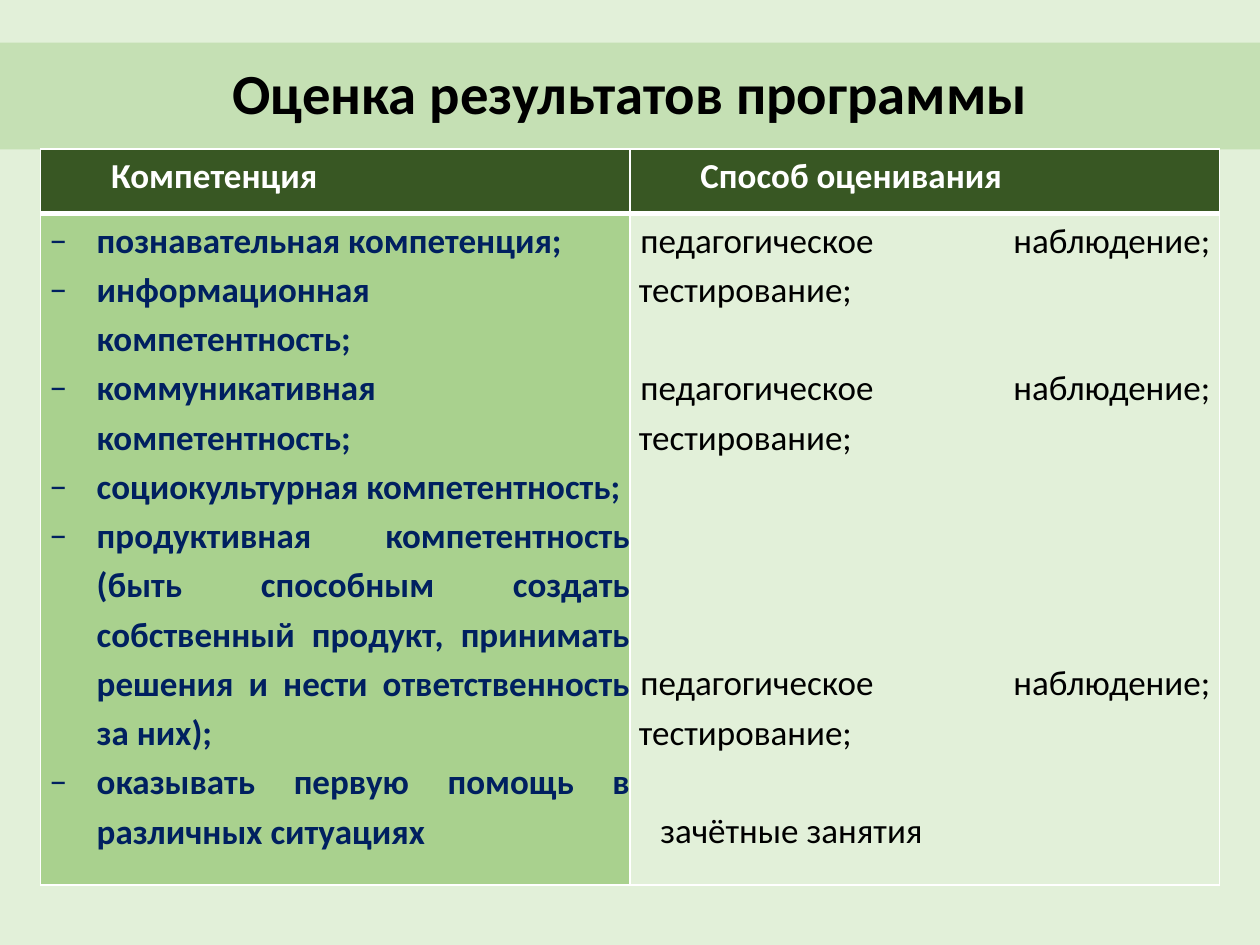
import pptx
import pptx.util
import pptx.dml.color
import pptx.enum.text
from dataclasses import dataclass
from lxml import etree
from pptx.oxml.ns import qn
from pptx.util import Cm, Pt

ALIGN = pptx.enum.text.PP_ALIGN


@dataclass(frozen=True)
class Theme:
    font: str = "Calibri"
    pale: str = "E2F0D9"
    band: str = "C5E0B4"
    leaf: str = "A9D18E"
    forest: str = "385723"
    navy: str = "002060"
    black: str = "000000"
    white: str = "FFFFFF"
    title_size: float = 32.4
    body_size: float = 20
    spacing: float = 1.15
    line_pitch: float = 28.1


T = Theme()

HEADERS = ["Компетенция", "Способ оценивания"]
COMPETENCES = [
    "познавательная компетенция;",
    "информационная компетентность;",
    "коммуникативная компетентность;",
    "социокультурная компетентность;",
    "продуктивная компетентность (быть способным создать собственный продукт, "
    "принимать решения и нести ответственность за них);",
    "оказывать первую помощь в различных ситуациях",
]
OBSERVATION = "педагогическое наблюдение; тестирование;"
# Assessment method, free lines above it, first-line indent in cm
METHODS = [
    (OBSERVATION, 0, 0.03),
    (OBSERVATION, 1, 0.03),
    (OBSERVATION, 4, 0.03),
    ("зачётные занятия", 1, 0.43),
]


def rgb(value):
    return pptx.dml.color.RGBColor.from_string(value)


def paint(fill, color):
    fill.solid()
    fill.fore_color.rgb = rgb(color)


def write(tf, text, first=False, size=T.body_size, color=T.black, bold=False,
          align=ALIGN.JUSTIFY, spacing=T.spacing, before=0, margin=0, indent=0,
          bullet=None):
    """Add one formatted paragraph; first=True uses the one already there."""
    p = tf.paragraphs[0] if first else tf.add_paragraph()
    p.alignment, p.line_spacing = align, spacing
    p.space_before, p.space_after = Pt(before), Pt(0)
    pPr = p._p.get_or_add_pPr()
    pPr.set("marL", str(Cm(margin)))
    pPr.set("indent", str(Cm(indent)))
    if bullet:
        etree.SubElement(pPr, qn("a:buFont")).set("typeface", T.font)
        etree.SubElement(pPr, qn("a:buChar")).set("char", bullet)
    r = p.add_run()
    r.text = text
    r.font.name, r.font.size, r.font.bold = T.font, Pt(size), bold
    r.font.color.rgb = rgb(color)


def add_title(s, text):
    sp = s.shapes.title
    sp.left, sp.top, sp.width, sp.height = Cm(0), Cm(0.86), Cm(25.4), Cm(2.15)
    paint(sp.fill, T.band)
    tf = sp.text_frame
    tf.auto_size = pptx.enum.text.MSO_AUTO_SIZE.NONE
    tf.vertical_anchor = pptx.enum.text.MSO_ANCHOR.MIDDLE
    write(tf, text, first=True, size=T.title_size, bold=True,
          align=ALIGN.CENTER, spacing=0.9)


def set_borders(cell, **widths):
    """Draw white cell borders; widths are points by side L, R, T, B."""
    tcPr = cell._tc.get_or_add_tcPr()
    for i, side in enumerate("LRTB"):
        ln = etree.Element(qn("a:ln" + side), w=str(Pt(widths.get(side, 1))))
        fill = etree.SubElement(ln, qn("a:solidFill"))
        etree.SubElement(fill, qn("a:srgbClr")).set("val", T.white)
        tcPr.insert(i, ln)


def format_cell(cell, color, right=0, **widths):
    cell.margin_left, cell.margin_right = Cm(0.18), Cm(right)
    cell.margin_top = cell.margin_bottom = Cm(0)
    paint(cell.fill, color)
    set_borders(cell, **widths)
    return cell.text_frame


def add_assessment_table(s):
    table = s.shapes.add_table(2, 2, Cm(0.82), Cm(3), Cm(23.76), Cm(14.84)).table
    table.horz_banding = False
    for row, height in zip(table.rows, (1.3, 13.54)):
        row.height = Cm(height)

    # Header row
    for col, text in enumerate(HEADERS):
        tf = format_cell(table.cell(0, col), T.forest, right=0.18 * col, B=3)
        write(tf, text, first=True, color=T.white, bold=True, indent=1.24)

    # Competences
    tf = format_cell(table.cell(1, 0), T.leaf, T=3)
    for i, text in enumerate(COMPETENCES):
        write(tf, text, first=i == 0, color=T.navy, bold=True,
              margin=0.95, indent=-0.95, bullet="−")

    # Assessment methods, level with their competences
    tf = format_cell(table.cell(1, 1), T.pale, right=0.18, T=3)
    for i, (text, gap, indent) in enumerate(METHODS):
        write(tf, text, first=i == 0, before=gap * T.line_pitch, indent=indent)


def main():
    prs = pptx.Presentation()
    prs.slide_width, prs.slide_height = Cm(25.4), Cm(19.05)
    s = prs.slides.add_slide(prs.slide_layouts[5])
    paint(s.background.fill, T.pale)
    add_title(s, "Оценка результатов программы")
    add_assessment_table(s)
    prs.save("out.pptx")


if __name__ == "__main__":
    main()
